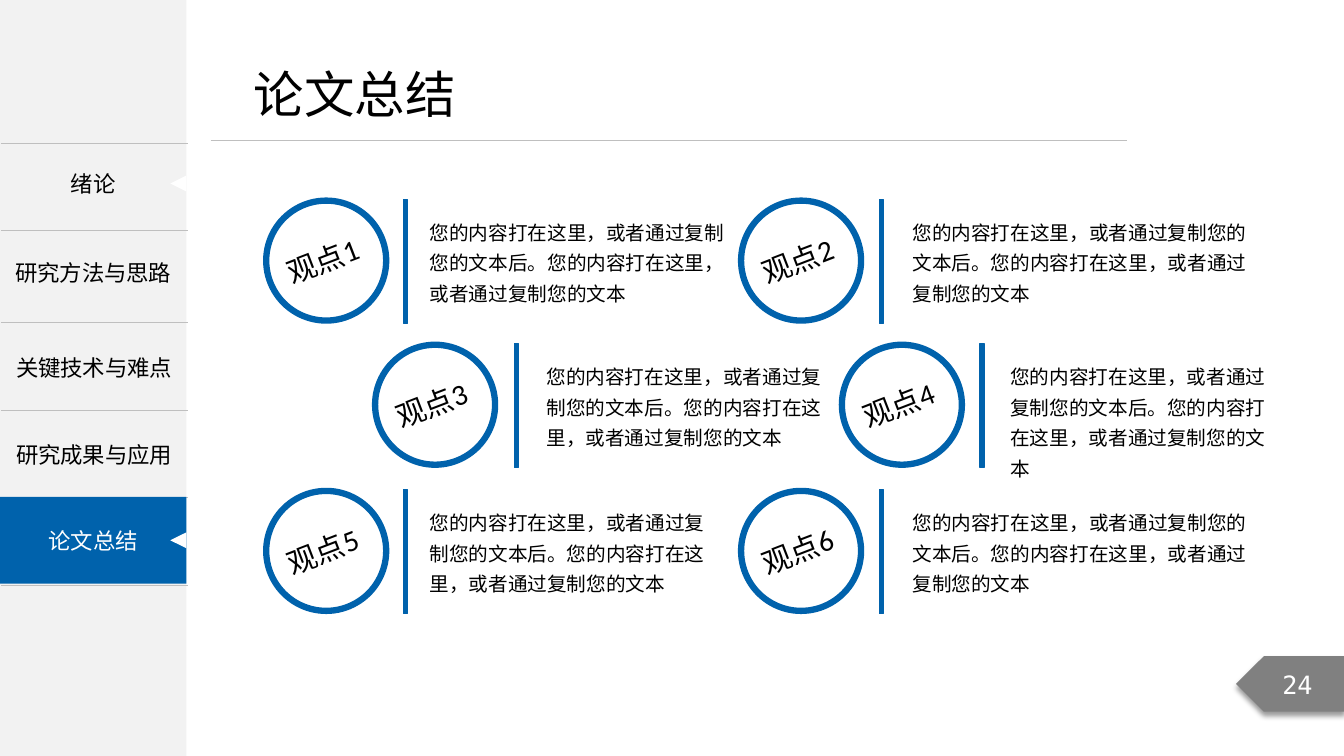
from lxml import etree
from pptx import Presentation
from pptx.dml.color import RGBColor
from pptx.enum import shapes as kinds, text as txt
from pptx.oxml.ns import qn
from pptx.util import Inches, Pt

BLUE = RGBColor(0x00, 0x62, 0xAC)
WHITE = RGBColor(0xFF, 0xFF, 0xFF)
BLACK = RGBColor(0x00, 0x00, 0x00)
PALE = RGBColor(0xF2, 0xF2, 0xF2)
RULE = RGBColor(0xBF, 0xBF, 0xBF)
GRAY = RGBColor(0x80, 0x80, 0x80)
CJK = "Noto Sans CJK SC"
NO_STYLE = "{2D5ABB26-0587-4C30-8999-92F81FD0307C}"
BODY = "您的内容打在这里，或者通过复制您的文本后。您的内容打在这里，或者通过复制您的文本"
CENTER = txt.PP_ALIGN.CENTER
MIDDLE = txt.MSO_ANCHOR.MIDDLE
SIDEBAR_W = 1.85
ROWS = [0.87, 0.91, 0.87, 0.87, 0.87]
CIRCLE = 1.19
# (label, circle left, circle top, bar left, body left, body width)
POINTS = [
    ("观点1", 2.64, 1.99, 4, 4.17, 3.18),
    ("观点2", 7.35, 1.99, 8.72, 8.96, 3.67),
    ("观点3", 3.72, 3.42, 5.1, 5.33, 2.94),
    ("观点4", 8.35, 3.42, 9.72, 9.93, 2.9),
    ("观点5", 2.64, 4.87, 4, 4.17, 3),
    ("观点6", 7.35, 4.87, 8.72, 8.96, 3.67),
]


def write(frame, words, size, color=BLACK, face=CJK, align=None):
    """Fill a text frame with one styled paragraph."""
    paragraph = frame.paragraphs[0]
    paragraph.text = words
    paragraph.alignment = align
    font = paragraph.font
    font.size, font.name = Pt(size), face
    font.color.rgb = color
    props = paragraph._p.pPr.find(qn("a:defRPr"))
    etree.SubElement(props, qn("a:ea")).set("typeface", CJK)
    return paragraph


def add_form(slide, kind, box, fill, line=None, width=0.75):
    """Add a flat preset shape."""
    form = slide.shapes.add_shape(kind, *map(Inches, box))
    form.shadow.inherit = False
    form.fill.solid()
    form.fill.fore_color.rgb = fill
    if line is None:
        form.line.fill.background()
    else:
        form.line.color.rgb = line
        form.line.width = Pt(width)
    return form


def add_words(slide, box, words, size, wrap=True, grow=True, **style):
    """Add a text box and return it with its paragraph."""
    holder = slide.shapes.add_textbox(*map(Inches, box))
    frame = holder.text_frame
    frame.word_wrap = wrap
    if grow:
        frame.auto_size = txt.MSO_AUTO_SIZE.SHAPE_TO_FIT_TEXT
    return holder, write(frame, words, size, **style)


def add_title(slide):
    """Add the heading and the rule under it."""
    rule = slide.shapes.add_connector(
        kinds.MSO_CONNECTOR.STRAIGHT, *map(Inches, (2.09, 1.39, 11.18, 1.39)))
    rule.line.color.rgb = RULE
    rule.line.width = Pt(0.5)
    etree.SubElement(rule._element.spPr, qn("a:effectLst"))
    add_words(slide, (2.42, 0.58, 2.22, 0.71), "论文总结", 36, wrap=False)


def add_page_tag(slide, number):
    """Add the page number tag with its soft shadow."""
    tag = add_form(slide, kinds.MSO_SHAPE.PENTAGON, (12.26, 6.51, 1.08, 0.55), GRAY)
    tag._element.spPr.xfrm.set("flipH", "1")
    effects = tag._element.spPr.find(qn("a:effectLst"))
    shadow = etree.SubElement(effects, qn("a:outerShdw"), blurRad=str(Pt(4)),
                              dist=str(Pt(3)), dir="5400000", rotWithShape="0")
    tint = etree.SubElement(shadow, qn("a:srgbClr"), val=str(BLACK))
    etree.SubElement(tint, qn("a:alpha"), val="40000")
    tag.text_frame.vertical_anchor = MIDDLE
    write(tag.text_frame, number, 18, WHITE, "DejaVu Sans Mono", CENTER)


def border_cell(cell):
    """Draw the lines above and below a clear cell."""
    cell.fill.background()
    props = cell._tc.get_or_add_tcPr()
    for place, side in enumerate(("a:lnT", "a:lnB")):
        edge = etree.Element(qn(side), w=str(Pt(1)))
        paint = etree.SubElement(edge, qn("a:solidFill"))
        etree.SubElement(paint, qn("a:srgbClr"), val=str(RULE))
        props.insert(place, edge)


def add_menu_table(slide):
    """Add the ruled menu with its two table entries."""
    box = (0.01, 1.42, SIDEBAR_W, sum(ROWS))
    menu = slide.shapes.add_table(len(ROWS), 1, *map(Inches, box)).table
    menu.first_row = menu.horz_banding = False
    menu._tbl.tblPr.find(qn("a:tableStyleId")).text = NO_STYLE
    entries = {2: "关键技术与难点", 3: "研究成果与应用"}
    for index, height in enumerate(ROWS):
        menu.rows[index].height = Inches(height)
        cell = menu.cell(index, 0)
        border_cell(cell)
        if index in entries:
            cell.vertical_anchor = MIDDLE
            write(cell.text_frame, entries[index], 16, align=CENTER)


def add_notch(slide, top):
    """Add the white pointer at the sidebar's right edge."""
    notch = add_form(slide, kinds.MSO_SHAPE.ISOSCELES_TRIANGLE,
                     (1.69, top, 0.16, 0.16), WHITE)
    notch.rotation = 270


def add_sidebar(slide):
    """Add the navigation column."""
    add_form(slide, kinds.MSO_SHAPE.RECTANGLE, (0, 0, SIDEBAR_W, 7.5), PALE)
    add_menu_table(slide)
    for words, top in (("绪论", 1.39), ("研究方法与思路", 2.27)):
        entry, _ = add_words(slide, (0, top, SIDEBAR_W, 0.86), words, 16,
                             grow=False, align=CENTER)
        entry.text_frame.vertical_anchor = MIDDLE
    current = add_form(slide, kinds.MSO_SHAPE.RECTANGLE,
                       (0, 4.93, SIDEBAR_W, 0.86), BLUE)
    current.text_frame.vertical_anchor = MIDDLE
    write(current.text_frame, "论文总结", 16, WHITE, align=CENTER)
    for top in (1.74, 5.28):
        add_notch(slide, top)


def add_point(slide, label, left, top, bar_left, body_left, body_width):
    """Add one ringed label with its bar and body text."""
    add_form(slide, kinds.MSO_SHAPE.OVAL, (left, top, CIRCLE, CIRCLE), WHITE, BLUE, 4.5)
    name, _ = add_words(slide, (left - 0.05, top + 0.37, 1.22, 0.45), label, 21,
                        face="Calibri", align=CENTER)
    name.rotation = 338.9
    add_form(slide, kinds.MSO_SHAPE.RECTANGLE,
             (bar_left, top - 0.01, 0.04, 1.23), BLUE, BLUE)
    body, paragraph = add_words(
        slide, (body_left, top + 0.09, body_width, 0.98), BODY, 14)
    paragraph.line_spacing = 1.3
    frame = body.text_frame
    frame.margin_left = frame.margin_right = Inches(0.09)
    frame.margin_top = frame.margin_bottom = Inches(0.04)


def main():
    """Build the summary slide."""
    deck = Presentation()
    deck.slide_width, deck.slide_height = Inches(13.33), Inches(7.5)
    slide = deck.slides.add_slide(deck.slide_layouts[6])
    add_sidebar(slide)
    add_title(slide)
    add_page_tag(slide, "24")
    for point in POINTS:
        add_point(slide, *point)
    deck.save("out.pptx")


if __name__ == "__main__":
    main()
